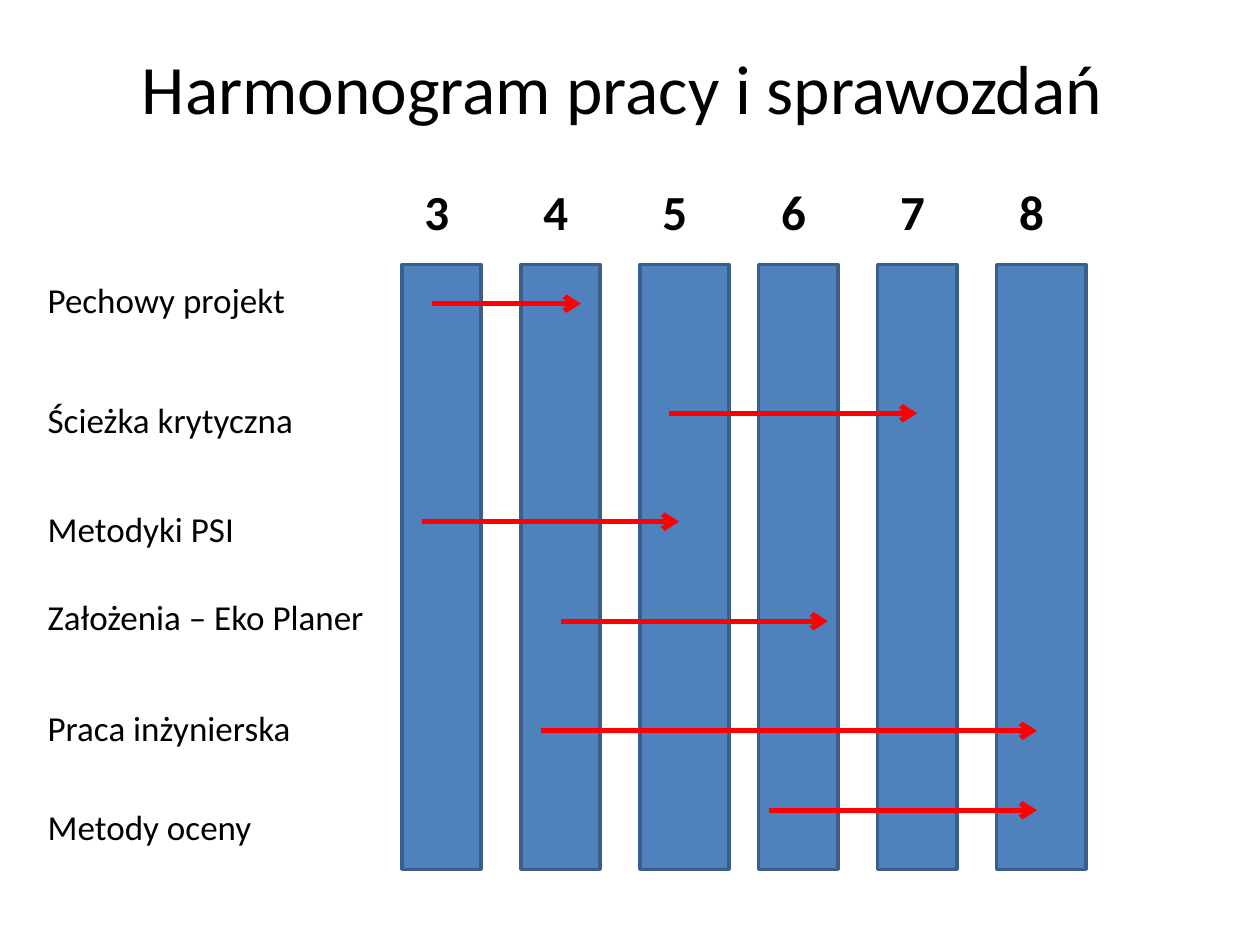
from lxml.etree import SubElement
from pptx import Presentation
from pptx.dml.color import RGBColor
from pptx.enum.shapes import MSO_CONNECTOR, MSO_SHAPE
from pptx.enum.text import MSO_ANCHOR, MSO_AUTO_SIZE, PP_ALIGN
from pptx.oxml.ns import qn
from pptx.util import Inches, Pt


def color(hex_value):
    return RGBColor.from_string(hex_value)


def write(frame, text, size, bold=False):
    frame.text = text
    font = frame.paragraphs[0].runs[0].font
    font.name = "Calibri"
    font.size = Pt(size)
    font.bold = bold
    font.color.rgb = color("000000")
    frame.word_wrap = True


prs = Presentation()
prs.slide_width, prs.slide_height = Inches(10), Inches(7.5)
slide = prs.slides.add_slide(prs.slide_layouts[5])
shapes = slide.shapes

# Title
title = shapes.title
title.left, title.top = Inches(0.5), Inches(0.3)
title.width, title.height = Inches(9), Inches(0.77)
write(title.text_frame, "Harmonogram pracy i sprawozdań ", 39.6)
title.text_frame.auto_size = MSO_AUTO_SIZE.NONE
title.text_frame.vertical_anchor = MSO_ANCHOR.MIDDLE
title.text_frame.paragraphs[0].alignment = PP_ALIGN.CENTER

# Tasks: name, label top, label width, arrow start, arrow end, arrow height
tasks = [
    ("Pechowy projekt", 2.16, 2.2, 3.43, 4.61, 2.41),
    ("Ścieżka krytyczna", 3.11, 2.99, 5.31, 7.28, 3.28),
    ("Metodyki PSI", 3.98, 2.68, 3.35, 5.39, 4.14),
    ("Założenia – Eko Planer", 4.68, 2.76, 4.45, 6.57, 4.93),
    ("Praca inżynierska", 5.56, 2.44, 4.29, 8.23, 5.8),
    ("Metody oceny", 6.34, 2.28, 6.1, 8.23, 6.43),
]
for name, top, width, *_ in tasks:
    label = shapes.add_textbox(Inches(0.28), Inches(top), Inches(width), Inches(0.44))
    write(label.text_frame, name, 20)
    label.text_frame.auto_size = MSO_AUTO_SIZE.SHAPE_TO_FIT_TEXT

# Numbered columns, every third one wider
for index, number in enumerate(range(3, 9)):
    left = 3.19 + index * 0.944
    width = 0.71 if index % 3 == 2 else 0.63
    column = shapes.add_shape(MSO_SHAPE.RECTANGLE, Inches(left), Inches(2.1),
                              Inches(width), Inches(4.8))
    column.shadow.inherit = False
    column.fill.solid()
    column.fill.fore_color.rgb = color("4F81BD")
    column.line.color.rgb = color("3A5F8C")
    column.line.width = Pt(2)

    heading = shapes.add_textbox(Inches(left + 0.08), Inches(1.39), Inches(0.79), Inches(0.57))
    write(heading.text_frame, str(number), 28, bold=True)
    heading.text_frame.auto_size = MSO_AUTO_SIZE.SHAPE_TO_FIT_TEXT

# Task arrows over the columns
for *_, start, end, height in tasks:
    arrow = shapes.add_connector(MSO_CONNECTOR.STRAIGHT, Inches(start), Inches(height),
                                 Inches(end), Inches(height))
    arrow.line.color.rgb = color("FF0000")
    arrow.line.width = Pt(3)
    SubElement(arrow.line._get_or_add_ln(), qn("a:tailEnd"), type="arrow")
    SubElement(arrow._element.spPr, qn("a:effectLst"))

prs.save("out.pptx")
